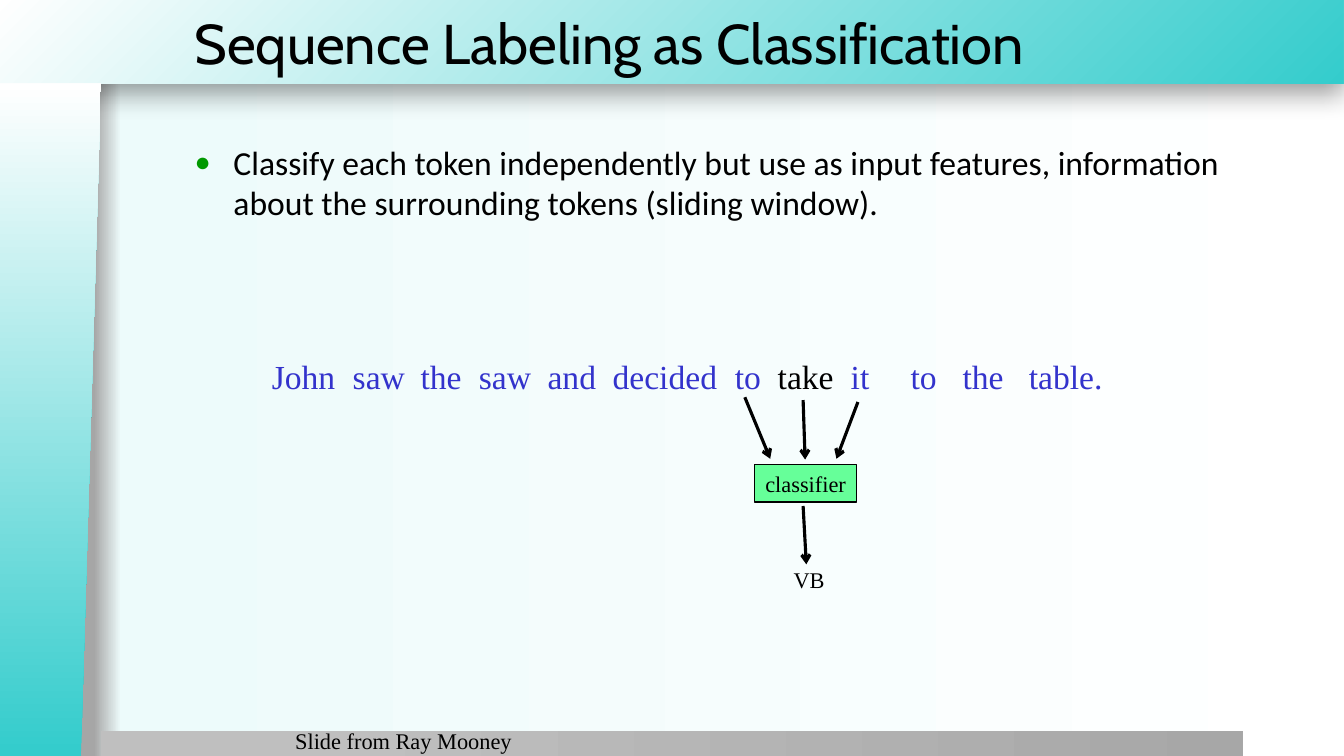
from lxml.etree import SubElement
from pptx import Presentation
from pptx.dml.color import RGBColor
from pptx.enum.shapes import MSO_CONNECTOR, MSO_SHAPE
from pptx.enum.text import MSO_ANCHOR, MSO_AUTO_SIZE, PP_ALIGN
from pptx.oxml import parse_xml
from pptx.oxml.ns import nsdecls, qn
from pptx.util import Cm, Pt

BLACK, BLUE, GREEN, TEAL, WHITE = "000000", "3333CC", "66FF99", "34CCCC", "FFFFFF"
SERIF = "Times New Roman"
LINEAR = '<a:lin ang="0" scaled="0"/>'
FROM_CORNER = '<a:path path="circle"><a:fillToRect l="100000" t="100000"/></a:path>'

# Each word of the sentence with its tab position in cm
SENTENCE = [
    ("John", 0), ("saw", 2.04), ("the", 3.75), ("saw", 5.22), ("and", 6.95),
    ("decided", 8.59), ("to", 11.67), ("take", 12.75), ("it", 14.59),
    ("to", 16.1), ("the", 17.41), ("table.", 19.08),
]
FOCUS_WORD = "take"

# Arrows as start x, start y, end x, end y in cm
ARROWS = [
    (18.77, 10.01, 19.41, 11.56),
    (20.24, 10.08, 20.29, 11.58),
    (21.62, 10.13, 21.08, 11.56),
    (20.24, 12.75, 20.32, 14.22),
]


def color(value):
    return RGBColor.from_string(value)


def set_attributes(target, values):
    for name, value in values.items():
        setattr(target, name, value)


def place(shape, left, top, width, height):
    set_attributes(shape, {"left": Cm(left), "top": Cm(top),
                           "width": Cm(width), "height": Cm(height)})


def set_gradient(fill, element, stops, direction=LINEAR):
    """Fill with (percent, colour) stops."""
    fill.gradient()
    stop_xml = "".join(
        f'<a:gs pos="{percent * 1000}"><a:srgbClr val="{value}"/></a:gs>'
        for percent, value in stops)
    gradient = element.find(".//" + qn("a:gradFill"))
    gradient.getparent().replace(gradient, parse_xml(
        f'<a:gradFill rotWithShape="1" {nsdecls("a")}>'
        f'<a:gsLst>{stop_xml}</a:gsLst>{direction}</a:gradFill>'))


def add_run(paragraph, text, size, font=SERIF, text_color=BLACK):
    run = paragraph.add_run()
    run.text = text
    set_attributes(run.font, {"size": Pt(size), "name": font})
    run.font.color.rgb = color(text_color)


def add_band(slide, depth, preset, box, stops, direction=LINEAR):
    """Add a decorative band behind the placeholders."""
    band = slide.shapes.add_shape(preset, *map(Cm, box))
    band.shadow.inherit = False
    band.line.fill.background()
    set_gradient(band.fill, band.element, stops, direction)
    slide.shapes.element.insert(2 + depth, band.element)
    return band


def add_label(slide, box, text="", align=PP_ALIGN.LEFT, wrap=False):
    label = slide.shapes.add_textbox(*map(Cm, box))
    label.text_frame.word_wrap = wrap
    paragraph = label.text_frame.paragraphs[0]
    paragraph.alignment = align
    if text:
        add_run(paragraph, text, 16)
    return label


def add_arrow(slide, ends):
    arrow = slide.shapes.add_connector(MSO_CONNECTOR.STRAIGHT, *map(Cm, ends))
    arrow.line.width = Pt(2.25)
    arrow.line.color.rgb = color(BLACK)
    SubElement(arrow.line._get_or_add_ln(), qn("a:tailEnd"), type="arrow")
    SubElement(arrow.element.spPr, qn("a:effectLst"))


def add_background(slide):
    set_gradient(slide.background.fill, slide.element,
                 [(7, "A6A6A6"), (9, "EDFBFB"), (100, WHITE)])
    header = add_band(slide, 0, MSO_SHAPE.RECTANGLE, (-0.03, 0, 33.88, 2.11),
                      [(0, TEAL), (100, WHITE)], FROM_CORNER)
    effects = header.element.spPr.find(qn("a:effectLst"))
    effects.append(parse_xml(
        f'<a:outerShdw {nsdecls("a")} blurRad="{Pt(20)}" dist="{Pt(6)}" dir="5400000" '
        'algn="t" rotWithShape="0"><a:srgbClr val="000000"><a:alpha val="40000"/>'
        '</a:srgbClr></a:outerShdw>'))
    add_band(slide, 1, MSO_SHAPE.RECTANGLE, (2.54, 18.42, 28.78, 0.66),
             [(20, "BFBFBF"), (100, "A7A7A7")])
    sidebar = add_band(slide, 2, MSO_SHAPE.FLOWCHART_MANUAL_INPUT,
                       (-7.21, 9.32, 16.97, 2.54), [(1, TEAL), (100, WHITE)])
    sidebar.rotation = 270
    sidebar.element.spPr.xfrm.set("flipV", "1")


def fill_title(title):
    place(title, 4.65, 0, 29.24, 2.11)
    set_attributes(title.text_frame, {"vertical_anchor": MSO_ANCHOR.MIDDLE,
                                      "auto_size": MSO_AUTO_SIZE.NONE})
    paragraph = title.text_frame.paragraphs[0]
    paragraph.alignment = PP_ALIGN.LEFT
    add_run(paragraph, "Sequence Labeling as Classification", 40, "Cabin")


def fill_body(body):
    place(body, 4.65, 3.45, 26.67, 14.71)
    body.text_frame.auto_size = MSO_AUTO_SIZE.NONE
    paragraph = body.text_frame.paragraphs[0]
    add_run(paragraph, "Classify each token independently but use as input features, "
            "information about the surrounding tokens (sliding window).", 24, "Calibri")
    properties = paragraph._p.get_or_add_pPr()
    properties.set("marL", str(Cm(0.98)))
    properties.set("indent", str(-Cm(0.98)))
    bullet_color = SubElement(properties, qn("a:buClr"))
    SubElement(bullet_color, qn("a:srgbClr"), val="009900")
    SubElement(properties, qn("a:buSzPct"), val="80000")
    SubElement(properties, qn("a:buChar"), char="●")


def add_sentence(slide):
    label = add_label(slide, (6.6, 8.84, 21.62, 1.3), wrap=True)
    paragraph = label.text_frame.paragraphs[0]
    tabs = SubElement(paragraph._p.get_or_add_pPr(), qn("a:tabLst"))
    for word, position in SENTENCE:
        if position:
            SubElement(tabs, qn("a:tab"), pos=str(Cm(position)), algn="l")
            word = "\t" + word
        focused = word.strip() == FOCUS_WORD
        add_run(paragraph, word, 24, text_color=BLACK if focused else BLUE)


def add_classifier(slide):
    box = add_label(slide, (19.02, 11.71, 2.57, 0.94), "classifier", PP_ALIGN.CENTER)
    box.text_frame.vertical_anchor = MSO_ANCHOR.MIDDLE
    box.fill.solid()
    box.fill.fore_color.rgb = color(GREEN)
    box.line.color.rgb = color(BLACK)
    box.line.width = Pt(1)


def main():
    presentation = Presentation()
    set_attributes(presentation, {"slide_width": Cm(33.87), "slide_height": Cm(19.05)})
    slide = presentation.slides.add_slide(presentation.slide_layouts[1])

    # Template parts and text
    add_background(slide)
    fill_title(slide.shapes.title)
    fill_body(slide.placeholders[1])

    # Sliding window diagram
    add_sentence(slide)
    add_classifier(slide)
    for ends in ARROWS:
        add_arrow(slide, ends)
    add_label(slide, (19.74, 14.15, 1.3, 0.94), "VB", PP_ALIGN.CENTER)

    # Credit
    add_label(slide, (7.19, 18.21, 8.69, 0.64), "Slide from Ray Mooney", wrap=True)
    presentation.save("out.pptx")


if __name__ == "__main__":
    main()
